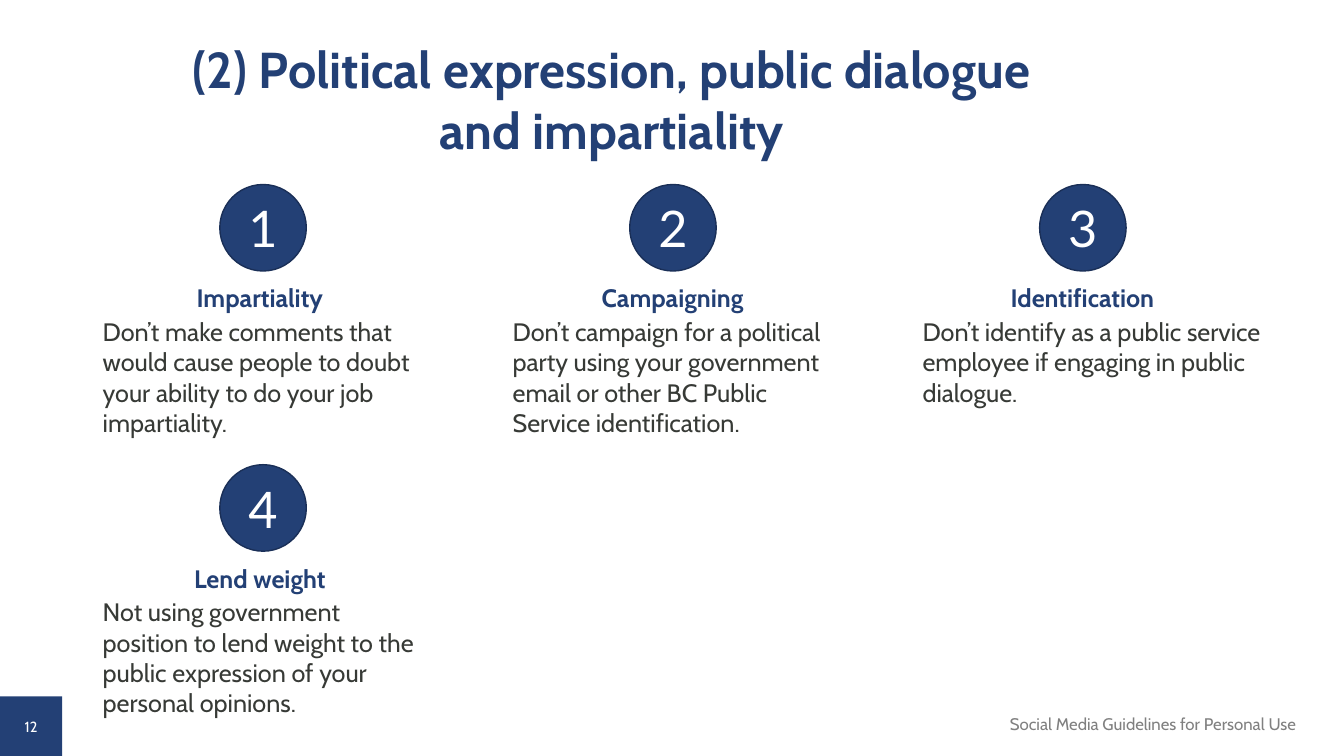
"""Build the slide on political expression, public dialogue and impartiality."""
from pptx import Presentation, util as u
from pptx.dml.color import RGBColor
from pptx.enum import shapes, text

COLORS = {"navy": "234075", "edge": "1A2F57", "body": "373A36",
          "grey": "808080", "white": "FFFFFF"}
LEFT, ALIGN_CENTER, RIGHT = (text.PP_ALIGN.LEFT, text.PP_ALIGN.CENTER,
                             text.PP_ALIGN.RIGHT)
TOP, MIDDLE = text.MSO_ANCHOR.TOP, text.MSO_ANCHOR.MIDDLE
COLUMNS = 3
COLUMN_LEFT, COLUMN_STEP = 2.34, 10.33
ROW_TOP, ROW_STEP = 4.65, 7.06
BADGE_SIZE = 2.18

RULES = [
    ("Impartiality ", "Don’t make comments that would cause people to doubt "
     "your ability to do your job impartiality.", 8.56),
    ("Campaigning", "Don’t campaign for a political party using your government "
     "email or other BC Public Service identification.", 8.56),
    ("Identification", "Don’t identify as a public service employee if engaging "
     "in public dialogue.", 9.2),
    ("Lend weight ", "Not using government position to lend weight to the "
     "public expression of your personal opinions.", 8.56),
]


def color(name):
    """Return the named colour."""
    return RGBColor.from_string(COLORS[name])


def write(frame, words, size, ink, align=LEFT, anchor=TOP, bold=False,
          font="Cabin", before=0):
    """Fill a text frame with one formatted paragraph."""
    frame.word_wrap = True
    frame.vertical_anchor = anchor
    frame.text = words
    paragraph = frame.paragraphs[0]
    paragraph.alignment = align
    paragraph.space_before = u.Pt(before)
    for run in paragraph.runs:
        run.font.name = font
        run.font.size = u.Pt(size)
        run.font.bold = bold
        run.font.color.rgb = color(ink)


def add_text(slide, box, words, size, ink, **style):
    """Add a text box at left, top, width, height in centimetres."""
    label = slide.shapes.add_textbox(*map(u.Cm, box))
    write(label.text_frame, words, size, ink, **style)


def add_block(slide, kind, box, edge=None):
    """Add a navy shape, outlined if an edge colour is given."""
    block = slide.shapes.add_shape(kind, *map(u.Cm, box))
    block.shadow.inherit = False
    block.fill.solid()
    block.fill.fore_color.rgb = color("navy")
    if edge:
        block.line.color.rgb = color(edge)
        block.line.width = u.Pt(1)
    else:
        block.line.fill.background()
    return block


def add_rule(slide, index, heading, advice, advice_width):
    """Add a numbered badge with its heading and advice."""
    row, column = divmod(index, COLUMNS)
    left = COLUMN_LEFT + column * COLUMN_STEP
    top = ROW_TOP + row * ROW_STEP
    badge = add_block(slide, shapes.MSO_SHAPE.OVAL,
                      (left + 3.2, top, BADGE_SIZE, BADGE_SIZE), "edge")
    write(badge.text_frame, str(index + 1), 36, "white", align=ALIGN_CENTER,
          anchor=MIDDLE, font="Lato")
    add_text(slide, (left, top + 2.18, 8.56, 1.35), heading, 18, "navy",
             align=ALIGN_CENTER, anchor=MIDDLE, bold=True, before=10)
    add_text(slide, (left, top + 3.2, advice_width, 3.8), advice, 18, "body",
             before=10)


def main():
    """Build and save the slide."""
    deck = Presentation()
    deck.slide_width, deck.slide_height = u.Cm(33.87), u.Cm(19.05)
    slide = deck.slides.add_slide(deck.slide_layouts[6])
    add_block(slide, shapes.MSO_SHAPE.RECTANGLE, (0, 17.55, 1.57, 1.5))
    add_text(slide, (0, 17.83, 1.57, 0.97), "12", 10.5, "white",
             align=ALIGN_CENTER, anchor=MIDDLE)
    add_text(slide, (2.54, 0.84, 26.04, 3.33),
             "(2) Political expression, public dialogue \vand impartiality ",
             36, "navy", align=ALIGN_CENTER, bold=True)
    for index, rule in enumerate(RULES):
        add_rule(slide, index, *rule)
    add_text(slide, (24.03, 17.86, 8.89, 0.76),
             "Social Media Guidelines for Personal Use", 12, "grey", align=RIGHT)
    deck.save("out.pptx")


if __name__ == "__main__":
    main()
